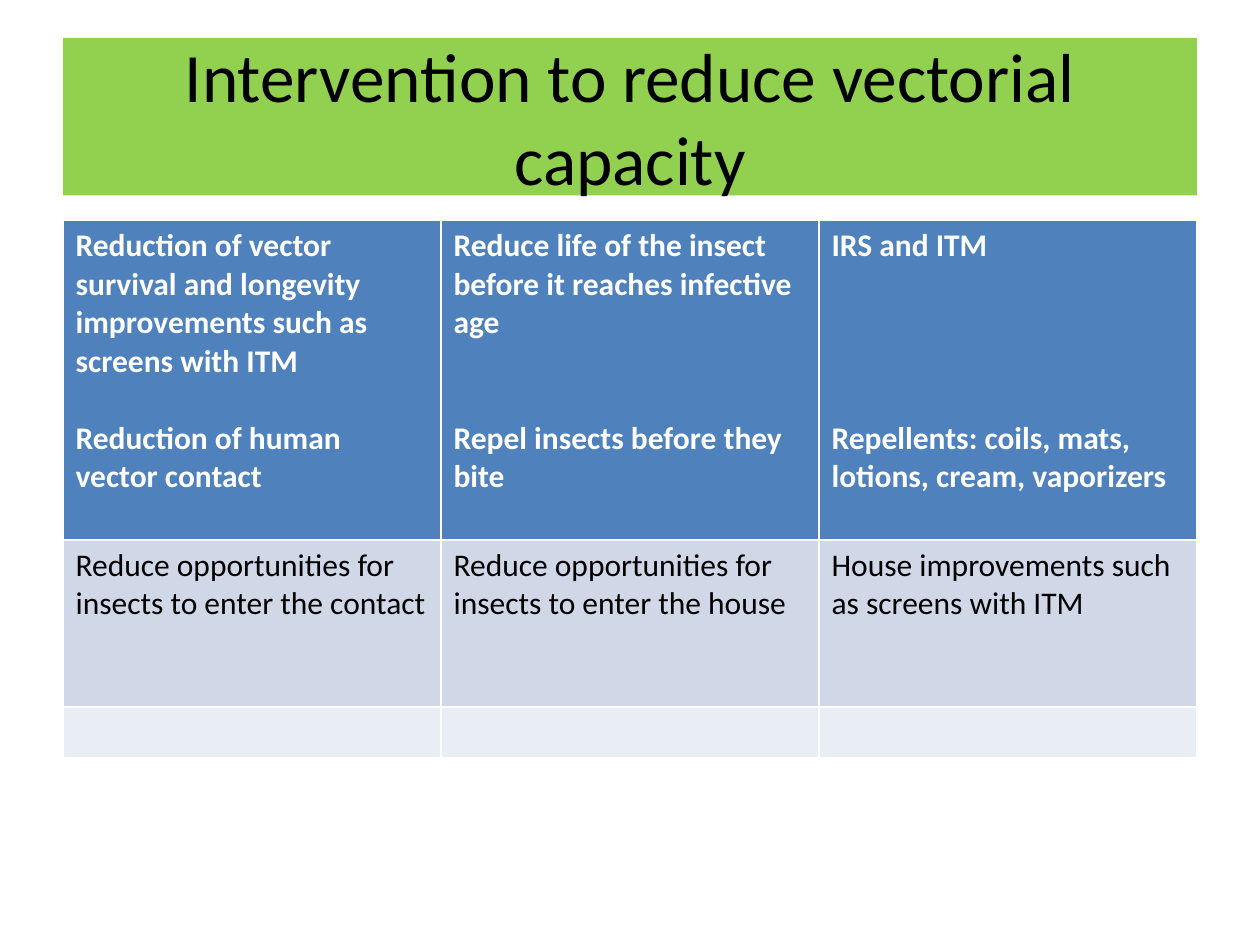
from pptx import Presentation
from pptx.dml.color import RGBColor
from pptx.enum.text import MSO_ANCHOR, MSO_AUTO_SIZE, PP_ALIGN
from pptx.util import Pt

COLORS = {"banner": "92D050", "header": "4F81BD", "band": "D0D8E8",
          "light": "E9EDF4", "white": "FFFFFF", "black": "000000"}
FONT = "Calibri"
LINE = 22

HEADER = [
    ("Reduction of vector survival and longevity improvements such as screens with ITM",
     "Reduction of human vector contact", 1),
    ("Reduce life of the insect before it reaches infective age",
     "Repel insects before they bite", 2),
    ("IRS and ITM", "Repellents: coils, mats, lotions, cream, vaporizers", 4),
]
BODY = ["Reduce opportunities for insects to enter the contact",
        "Reduce opportunities for insects to enter the house",
        "House improvements such as screens with ITM"]


def rgb(name):
    """Return the named colour."""
    return RGBColor.from_string(COLORS[name])


def style_text(p, size, color, bold=False):
    """Format the font of one paragraph and its runs."""
    for item in [p, *p.runs]:
        font = item.font
        font.name, font.size, font.bold = FONT, Pt(size), bold
        font.color.rgb = rgb(color)


def add_title(slide, x, y, w, h):
    """Place the title on its green banner."""
    sp = slide.shapes.title
    sp.left, sp.top, sp.width, sp.height = Pt(x), Pt(y), Pt(w), Pt(h)
    sp.fill.solid()
    sp.fill.fore_color.rgb = rgb("banner")
    tf = sp.text_frame
    tf.text = "Intervention to reduce vectorial capacity"
    tf.auto_size = MSO_AUTO_SIZE.NONE
    tf.word_wrap = True
    tf.vertical_anchor = MSO_ANCHOR.MIDDLE
    tf.paragraphs[0].alignment = PP_ALIGN.CENTER
    style_text(tf.paragraphs[0], 39.6, "black")


def add_interventions(slide, x, y, w, heights):
    """Place the table of interventions with equal columns."""
    table = slide.shapes.add_table(len(heights), len(HEADER), Pt(x), Pt(y),
                                   Pt(w), Pt(sum(heights))).table
    for col in table.columns:
        col.width = Pt(w / len(HEADER))
    for row, height, fill in zip(table.rows, heights, ("header", "band", "light")):
        row.height = Pt(height)
        for cell in row.cells:
            cell.fill.solid()
            cell.fill.fore_color.rgb = rgb(fill)
    for i, (first, second, gap) in enumerate(HEADER):
        tf = table.cell(0, i).text_frame
        tf.text = first
        p = tf.add_paragraph()
        p.text = second
        p.space_before = Pt(gap * LINE)
        for p in tf.paragraphs:
            style_text(p, 18, "white", True)
    for i, text in enumerate(BODY):
        tf = table.cell(1, i).text_frame
        tf.text = text
        style_text(tf.paragraphs[0], 18, "black")


def main():
    """Build and save the slide."""
    prs = Presentation()
    prs.slide_width, prs.slide_height = Pt(720), Pt(540)
    slide = prs.slides.add_slide(prs.slide_layouts[5])
    add_title(slide, 36, 21.6, 648, 90)
    add_interventions(slide, 36, 126, 648, (182.6, 95.4, 29.2))
    prs.save("out.pptx")


if __name__ == "__main__":
    main()
